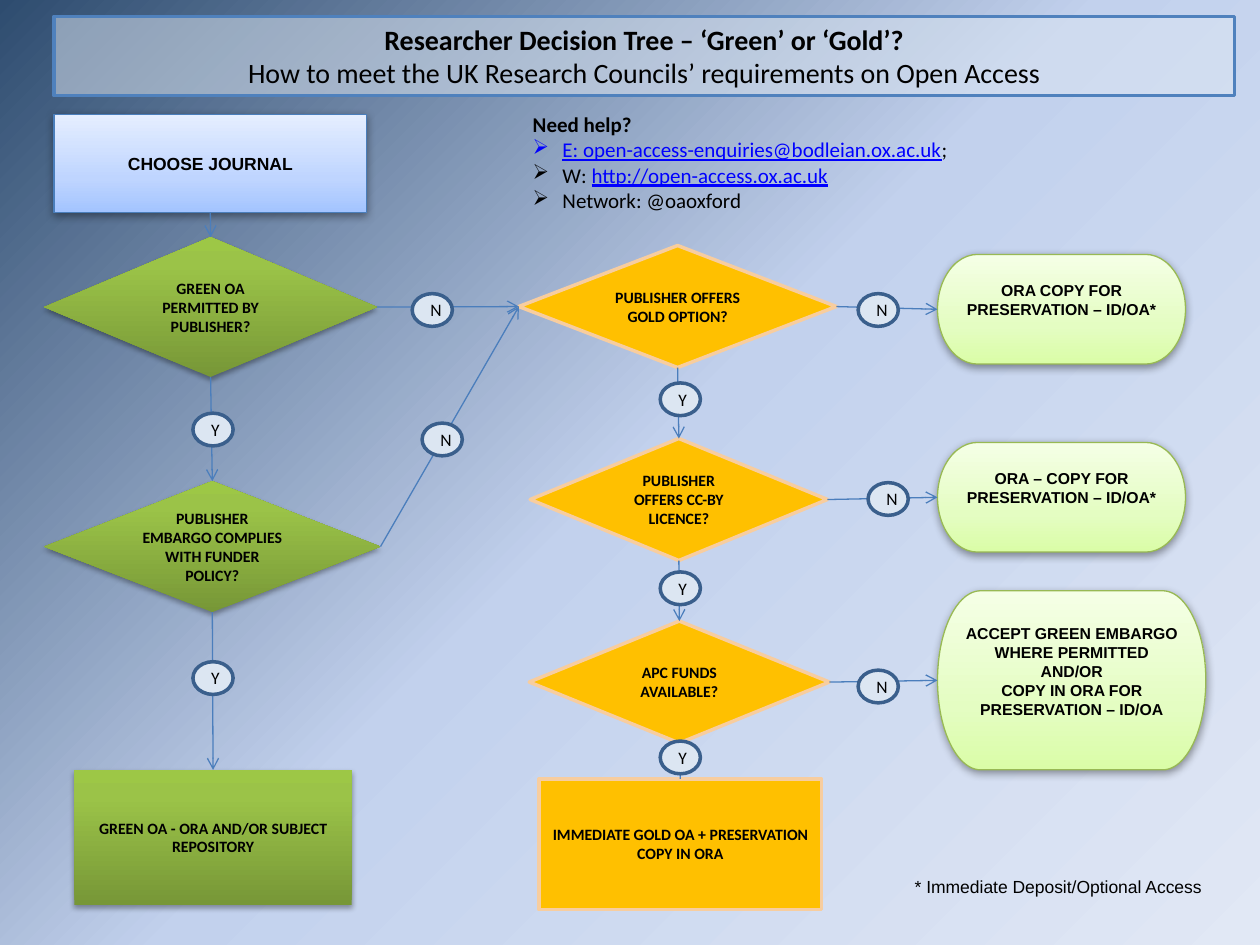
from lxml import etree
from pptx import Presentation
from pptx.dml.color import RGBColor
from pptx.enum import shapes, text
from pptx.oxml import ns
from pptx.util import Cm, Pt

BLACK = RGBColor(0x00, 0x00, 0x00)
LINK = RGBColor(0x00, 0x00, 0xFF)
PALE_BLUE = RGBColor(0xDC, 0xE6, 0xF2)
FRAME_BLUE = RGBColor(0x4F, 0x81, 0xBD)
START_BLUE = RGBColor(0x4A, 0x7E, 0xBB)
ARROW_BLUE = RGBColor(0x4B, 0x7E, 0xBC)
RING_BLUE = RGBColor(0x3A, 0x5F, 0x8C)
GOLD = RGBColor(0xFF, 0xC0, 0x00)
GOLD_EDGE = RGBColor(0xF7, 0xCD, 0x9F)
MINT_EDGE = RGBColor(0x98, 0xB9, 0x54)

# Gradients: (position %, colour, opacity %)
BACKDROP = [(0, RGBColor(0x2E, 0x4C, 0x6F), 65), (50, RGBColor(0xC2, 0xD1, 0xED), 100),
            (100, RGBColor(0xE1, 0xE8, 0xF5), 100)]
GREEN = [(0, RGBColor(0x77, 0x97, 0x37), 100), (80, RGBColor(0x9B, 0xC3, 0x48), 100),
         (100, RGBColor(0x9D, 0xC7, 0x46), 100)]
SKY = [(0, RGBColor(0xA3, 0xC4, 0xFF), 100), (35, RGBColor(0xBF, 0xD5, 0xFF), 100),
       (100, RGBColor(0xE5, 0xEE, 0xFF), 100)]
MINT = [(0, RGBColor(0xDA, 0xFD, 0xA7), 100), (35, RGBColor(0xE4, 0xFD, 0xC2), 100),
        (100, RGBColor(0xF5, 0xFF, 0xE6), 100)]

# Shadows: opacity %, blur pt, distance pt
SMALL_SHADOW, LARGE_SHADOW = (35, 3.1, 1.8), (38, 5, 1.6)

KIND = shapes.MSO_SHAPE
BOX, DIAMOND = KIND.FLOWCHART_PROCESS, KIND.FLOWCHART_DECISION
PILL, CIRCLE = KIND.FLOWCHART_TERMINATOR, KIND.FLOWCHART_CONNECTOR
TOP, LEFT, BOTTOM, RIGHT = range(4)

SMALL = {"name": "Calibri", "size": Pt(9), "bold": True}
START = {"fill": SKY, "edge": (START_BLUE, 0.75), "shadow": LARGE_SHADOW,
         "font": {"name": "Arial", "size": Pt(10), "bold": True}}
GREEN_STEP = {"fill": GREEN, "shadow": SMALL_SHADOW, "font": SMALL}
GOLD_STEP = {"fill": GOLD, "edge": (GOLD_EDGE, 2), "font": SMALL}
OUTCOME = {"fill": MINT, "edge": (MINT_EDGE, 0.75), "shadow": LARGE_SHADOW,
           "font": dict(SMALL, name="Arial"), "bottom": 0.5}
ANSWER = {"fill": PALE_BLUE, "edge": (RING_BLUE, 2),
          "font": {"name": "Calibri", "size": Pt(10)}}

# name: (shape, place in cm, style, paragraphs)
STEPS = {
    "start": (BOX, (1.09, 2.31, 6.3, 1.98), START, ["CHOOSE JOURNAL"]),
    "green": (DIAMOND, (0.89, 4.78, 6.71, 2.82), GREEN_STEP,
              ["GREEN OA PERMITTED BY PUBLISHER?"]),
    "embargo": (DIAMOND, (0.89, 9.7, 6.78, 2.64), GREEN_STEP,
                ["PUBLISHER EMBARGO COMPLIES WITH FUNDER POLICY?"]),
    "green end": (BOX, (1.5, 15.52, 5.59, 2.72), GREEN_STEP,
                  ["GREEN OA - ORA AND/OR SUBJECT REPOSITORY"]),
    "gold": (DIAMOND, (10.46, 4.95, 6.4, 2.46), GOLD_STEP, ["PUBLISHER OFFERS GOLD OPTION?"]),
    "licence": (DIAMOND, (10.69, 8.84, 5.99, 2.46), GOLD_STEP,
                ["PUBLISHER OFFERS CC-BY LICENCE?"]),
    "funds": (DIAMOND, (10.67, 12.52, 6.05, 2.46), GOLD_STEP, ["APC FUNDS AVAILABLE?"]),
    "gold end": (BOX, (10.87, 15.7, 5.69, 2.64), GOLD_STEP,
                 ["IMMEDIATE GOLD OA + PRESERVATION COPY IN ORA"]),
    "no gold": (PILL, (18.9, 5.13, 5, 2.21), OUTCOME, ["ORA COPY FOR PRESERVATION – ID/OA*"]),
    "no licence": (PILL, (18.9, 8.92, 5, 2.21), OUTCOME,
                   ["ORA – COPY FOR PRESERVATION – ID/OA*"]),
    "no funds": (PILL, (18.9, 11.91, 5.41, 3.61), OUTCOME,
                 ["ACCEPT GREEN EMBARGO WHERE PERMITTED", "AND/OR",
                  "COPY IN ORA FOR PRESERVATION – ID/OA"]),
}
# from, side, to, side, arrowhead
ROUTES = [
    ("start", BOTTOM, "green", TOP, True),
    ("green", BOTTOM, "embargo", TOP, True),
    ("embargo", BOTTOM, "green end", TOP, True),
    ("green", RIGHT, "gold", LEFT, True),
    ("embargo", RIGHT, "gold", LEFT, True),
    ("gold", BOTTOM, "licence", TOP, True),
    ("licence", BOTTOM, "funds", TOP, True),
    ("funds", BOTTOM, "gold end", TOP, False),
    ("gold", RIGHT, "no gold", LEFT, True),
    ("licence", RIGHT, "no licence", LEFT, True),
    ("funds", RIGHT, "no funds", LEFT, True),
]
ANSWERS = {
    "Y": [(3.89, 8.33), (3.89, 13.34), (13.31, 7.72), (13.31, 11.53), (13.31, 14.94)],
    "N": [(8.31, 5.92), (8.51, 8.53), (17.3, 5.92), (17.5, 9.73), (17.3, 13.51)],
}


def add_element(parent, tag, **values):
    element = etree.SubElement(parent, ns.qn(tag))
    for name, value in values.items():
        element.set(name, str(value))
    return element


def add_color(parent, color, opacity):
    element = add_element(parent, "a:srgbClr", val=color)
    if opacity < 100:
        add_element(element, "a:alpha", val=opacity * 1000)


def set_gradient(owner, fill, stops, angle):
    """Put a linear gradient where the owner's solid fill would stand."""
    fill.solid()
    solid = next(owner.iter(ns.qn("a:solidFill")))
    gradient = etree.Element(ns.qn("a:gradFill"), rotWithShape="1")
    stop_list = add_element(gradient, "a:gsLst")
    for position, color, opacity in stops:
        add_color(add_element(stop_list, "a:gs", pos=position * 1000), color, opacity)
    add_element(gradient, "a:lin", ang=angle * 60000, scaled=0)
    solid.getparent().replace(solid, gradient)


def add_span(para, words, font):
    span = para.add_run()
    span.text = words
    span.font.color.rgb = BLACK
    for name, value in font.items():
        if name == "color":
            span.font.color.rgb = value
        else:
            setattr(span.font, name, value)


def add_node(page, kind, place, fill, font, lines, edge=None, shadow=None, bottom=0.13):
    """Add a filled shape with centred text; font is one format or one per line."""
    node = page.shapes.add_shape(kind, *map(Cm, place))
    node.shadow.inherit = False
    if isinstance(fill, list):
        set_gradient(node.element.spPr, node.fill, fill, 270)
    else:
        node.fill.solid()
        node.fill.fore_color.rgb = fill
    if edge:
        node.line.color.rgb, node.line.width = edge[0], Pt(edge[1])
    else:
        node.line.fill.background()
    if shadow:
        opacity, blur, distance = shadow
        effects = node.element.spPr.find(ns.qn("a:effectLst"))
        outer = add_element(effects, "a:outerShdw", blurRad=Pt(blur), dist=Pt(distance),
                            dir=90 * 60000, rotWithShape=0)
        add_color(outer, BLACK, opacity)
    frame = node.text_frame
    frame.word_wrap = True
    frame.vertical_anchor = text.MSO_ANCHOR.MIDDLE
    frame.margin_bottom = Cm(bottom)
    fonts = font if isinstance(font, list) else [font] * len(lines)
    for index, (line, line_font) in enumerate(zip(lines, fonts)):
        para = frame.add_paragraph() if index else frame.paragraphs[0]
        para.alignment = text.PP_ALIGN.CENTER
        add_span(para, line, line_font)
    return node


def add_route(page, start, start_side, end, end_side, arrow):
    route = page.shapes.add_connector(shapes.MSO_CONNECTOR.STRAIGHT, 0, 0, 0, 0)
    route.begin_connect(start, start_side)
    route.end_connect(end, end_side)
    route.line.color.rgb, route.line.width = ARROW_BLUE, Pt(0.75)
    if arrow:
        add_element(route.line._get_or_add_ln(), "a:tailEnd", type="arrow")
    add_element(route.element.spPr, "a:effectLst")


def add_textbox(page, place, font, lines):
    """Add lines given as (bulleted, [(words, extra format)])."""
    frame = page.shapes.add_textbox(*map(Cm, place)).text_frame
    frame.word_wrap = True
    for index, (bulleted, spans) in enumerate(lines):
        para = frame.add_paragraph() if index else frame.paragraphs[0]
        if bulleted:
            props = para._p.get_or_add_pPr()
            props.set("marL", str(Cm(0.6)))
            props.set("indent", str(-Cm(0.6)))
            add_element(props, "a:buChar", char="➢")
        for words, extra in spans:
            add_span(para, words, {**font, **extra})


def main():
    deck = Presentation()
    deck.slide_width, deck.slide_height = Cm(25.4), Cm(19.05)
    page = deck.slides.add_slide(deck.slide_layouts[6])
    set_gradient(page.element, page.background.fill, BACKDROP, 45)

    title_font = {"name": "Calibri", "size": Pt(16)}
    title = add_node(page, BOX, (1.09, 0.33, 23.8, 1.6), PALE_BLUE,
                     [dict(title_font, bold=True), title_font],
                     ["Researcher Decision Tree – ‘Green’ or ‘Gold’?",
                      "How to meet the UK Research Councils’ requirements on Open Access"],
                     edge=(FRAME_BLUE, 2))
    title_color = next(title.element.spPr.iter(ns.qn("a:srgbClr")))
    add_element(title_color, "a:alpha", val=52000)

    nodes = {name: add_node(page, kind, place, lines=lines, **style)
             for name, (kind, place, style, lines) in STEPS.items()}
    for start, start_side, end, end_side, arrow in ROUTES:
        add_route(page, nodes[start], start_side, nodes[end], end_side, arrow)
    for letter, corners in ANSWERS.items():
        for corner in corners:
            add_node(page, CIRCLE, (*corner, 0.81, 0.66), lines=[letter], **ANSWER)

    link = {"color": LINK, "underline": True}
    add_textbox(page, (10.49, 2.13, 9.4, 2.31), {"name": "Calibri", "size": Pt(12)}, [
        (False, [("Need help?", {"bold": True})]),
        (True, [("E: open-access-enquiries@bodleian.ox.ac.uk", link), (";", {})]),
        (True, [("W: ", {}), ("http://open-access.ox.ac.uk", link)]),
        (True, [("Network: @oaoxford", {})]),
    ])
    add_textbox(page, (18.19, 17.53, 7.21, 0.69), {"name": "Arial", "size": Pt(10)},
                [(False, [("* Immediate Deposit/Optional Access", {})])])
    deck.save("out.pptx")


if __name__ == "__main__":
    main()
